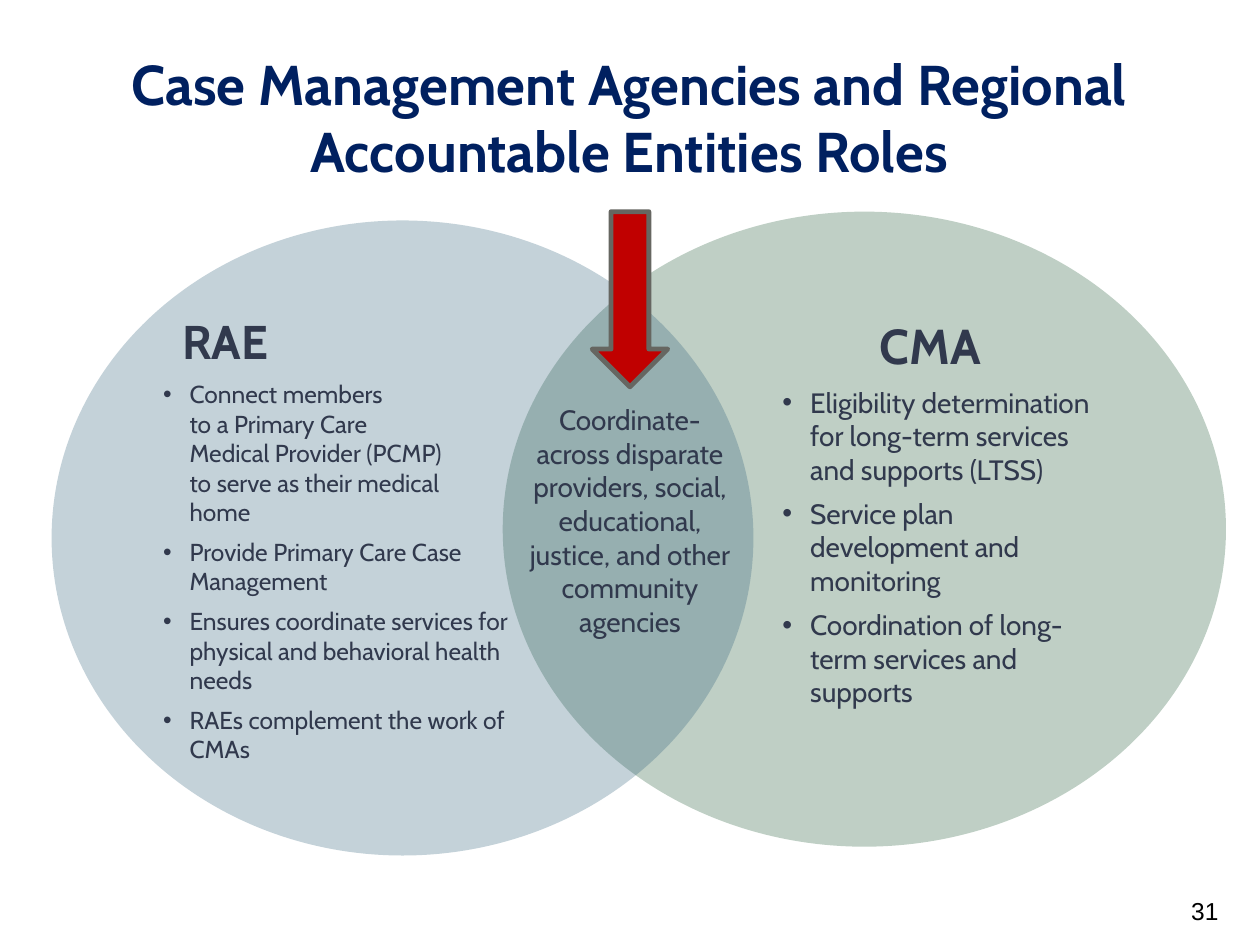
import copy

import pptx
import pptx.dml.color
import pptx.enum.shapes
import pptx.enum.text
import pptx.oxml
import pptx.oxml.ns
import pptx.util
from pptx.util import Inches

RGBColor = pptx.dml.color.RGBColor
SHAPES = pptx.enum.shapes.MSO_SHAPE
ALIGN = pptx.enum.text.PP_ALIGN
qn = pptx.oxml.ns.qn

NAVY = RGBColor(0x00, 0x20, 0x60)
SLATE = RGBColor(0x31, 0x39, 0x4D)
BLACK = RGBColor(0x00, 0x00, 0x00)
GREEN = RGBColor(0x24, 0x5D, 0x38)
BLUE = RGBColor(0x35, 0x64, 0x7E)
RED = RGBColor(0xC0, 0x00, 0x00)
GREY = RGBColor(0x66, 0x66, 0x61)


def set_frame(frame, side=0.06, top=0.03, bottom=0.03):
    frame.word_wrap = True
    frame.vertical_anchor = pptx.enum.text.MSO_ANCHOR.MIDDLE
    frame.margin_left = frame.margin_right = Inches(side)
    frame.margin_top, frame.margin_bottom = Inches(top), Inches(bottom)


def write(paragraph, text, size, color=SLATE, align=ALIGN.LEFT, bold=False, font="Cabin"):
    """Fill a paragraph and give its runs and line breaks the same format."""
    paragraph.text = text
    paragraph.alignment = align
    for run in paragraph.runs:
        run.font.size = pptx.util.Pt(size)
        run.font.name = font
        run.font.bold = bold
        run.font.color.rgb = color
    for line_break in paragraph._p.findall(qn("a:br")):
        line_break.append(copy.deepcopy(paragraph.runs[0]._r.rPr))


presentation = pptx.Presentation()
presentation.slide_width, presentation.slide_height = Inches(10), Inches(7.5)
slide = presentation.slides.add_slide(presentation.slide_layouts[6])

page_number = slide.shapes.add_textbox(Inches(8.08), Inches(7.03), Inches(1.65), Inches(0.4))
set_frame(page_number.text_frame)
write(page_number.text_frame.paragraphs[0], "31", 14, BLACK, ALIGN.RIGHT, font="Arial")

title = slide.shapes.add_textbox(Inches(0.25), Inches(0.48), Inches(9.49), Inches(0.89))
set_frame(title.text_frame, 0, 0, 0)
write(title.text_frame.paragraphs[0],
      "Case Management Agencies and Regional Accountable Entities Roles",
      32, NAVY, ALIGN.CENTER, True)

# Indents are (left, first line, right) in inches.
roles = [
    dict(box=(3.99, 1.68, 5.74, 5.04), color=GREEN, bottom=0.3,
         heading="CMA", heading_size=28, heading_align=ALIGN.CENTER,
         heading_indent=(1.43, -0.38, 0), size=16, indent=(1.54, -0.22, 0.1),
         duties=["Eligibility determination for long-term services and supports (LTSS)",
                 "Service plan development and monitoring",
                 "Coordination of long-term services and supports"]),
    dict(box=(0.41, 1.75, 5.57, 5.04), color=BLUE, bottom=0.03,
         heading="RAE", heading_size=27, heading_align=ALIGN.LEFT,
         heading_indent=(0.16, 0, 0), size=14, indent=(0.22, -0.21, 0.85),
         duties=["Connect members\nto a Primary Care\nMedical Provider (PCMP)\n"
                 "to serve as their medical\nhome",
                 "Provide Primary Care Case Management",
                 "Ensures coordinate services for physical and behavioral health needs",
                 "RAEs complement the work of CMAs"]),
]
for role in roles:
    circle = slide.shapes.add_shape(SHAPES.OVAL, *map(Inches, role["box"]))
    circle.shadow.inherit = False
    circle.line.fill.background()
    circle.fill.solid()
    circle.fill.fore_color.rgb = role["color"]
    color_element = circle._element.spPr.find(qn("a:solidFill"))[0]
    color_element.append(pptx.oxml.parse_xml(
        f'<a:alpha {pptx.oxml.ns.nsdecls("a")} val="29000"/>'))

    frame = circle.text_frame
    set_frame(frame, bottom=role["bottom"])
    heading = frame.paragraphs[0]
    write(heading, role["heading"], role["heading_size"],
          align=role["heading_align"], bold=True)
    indents = [(heading, role["heading_indent"])]
    for duty in role["duties"]:
        item = frame.add_paragraph()
        write(item, duty, role["size"])
        item.space_before = pptx.util.Pt(6)
        bullet = pptx.oxml.parse_xml(
            f'<a:pPr {pptx.oxml.ns.nsdecls("a")}><a:buClr><a:srgbClr val="{SLATE}"/></a:buClr>'
            '<a:buFont typeface="Arial"/><a:buChar char="•"/></a:pPr>')
        item._p.get_or_add_pPr().extend(list(bullet))
        indents.append((item, role["indent"]))
    for paragraph, indent in indents:
        for name, inches in zip(("marL", "indent", "marR"), indent):
            paragraph._p.get_or_add_pPr().set(name, str(Inches(inches)))

shared_role = slide.shapes.add_textbox(Inches(4.06), Inches(2.68), Inches(1.88), Inches(2.9))
set_frame(shared_role.text_frame)
write(shared_role.text_frame.paragraphs[0],
      "Coordinate-\nacross disparate providers, social, educational, justice, "
      "and other community agencies", 16, align=ALIGN.CENTER)

arrow = slide.shapes.add_shape(SHAPES.DOWN_ARROW, Inches(4.7), Inches(1.68),
                               Inches(0.6), Inches(1.39))
arrow.shadow.inherit = False
arrow.fill.solid()
arrow.fill.fore_color.rgb = RED
arrow.line.color.rgb = GREY
arrow.line.width = pptx.util.Pt(2.75)

presentation.save("out.pptx")
